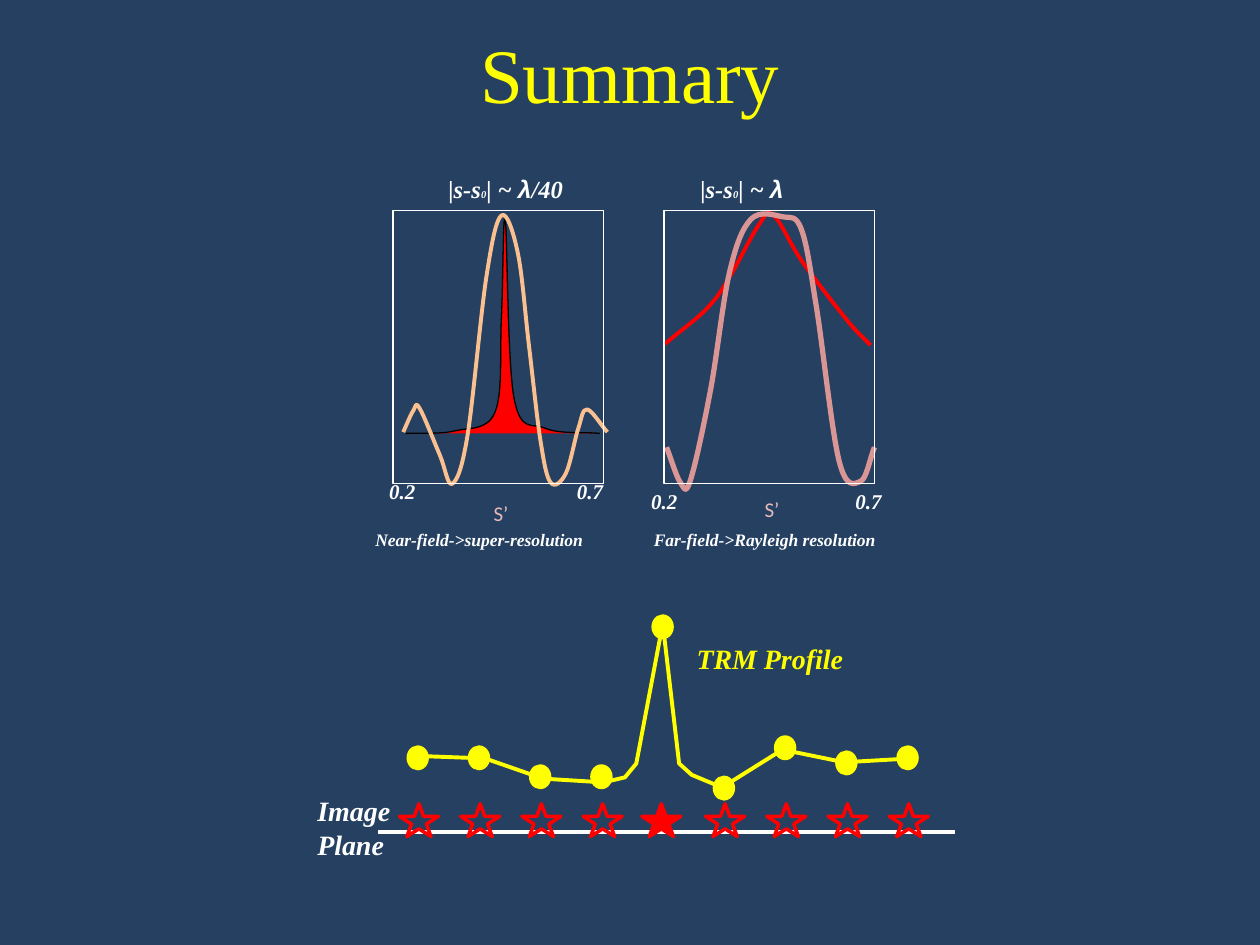
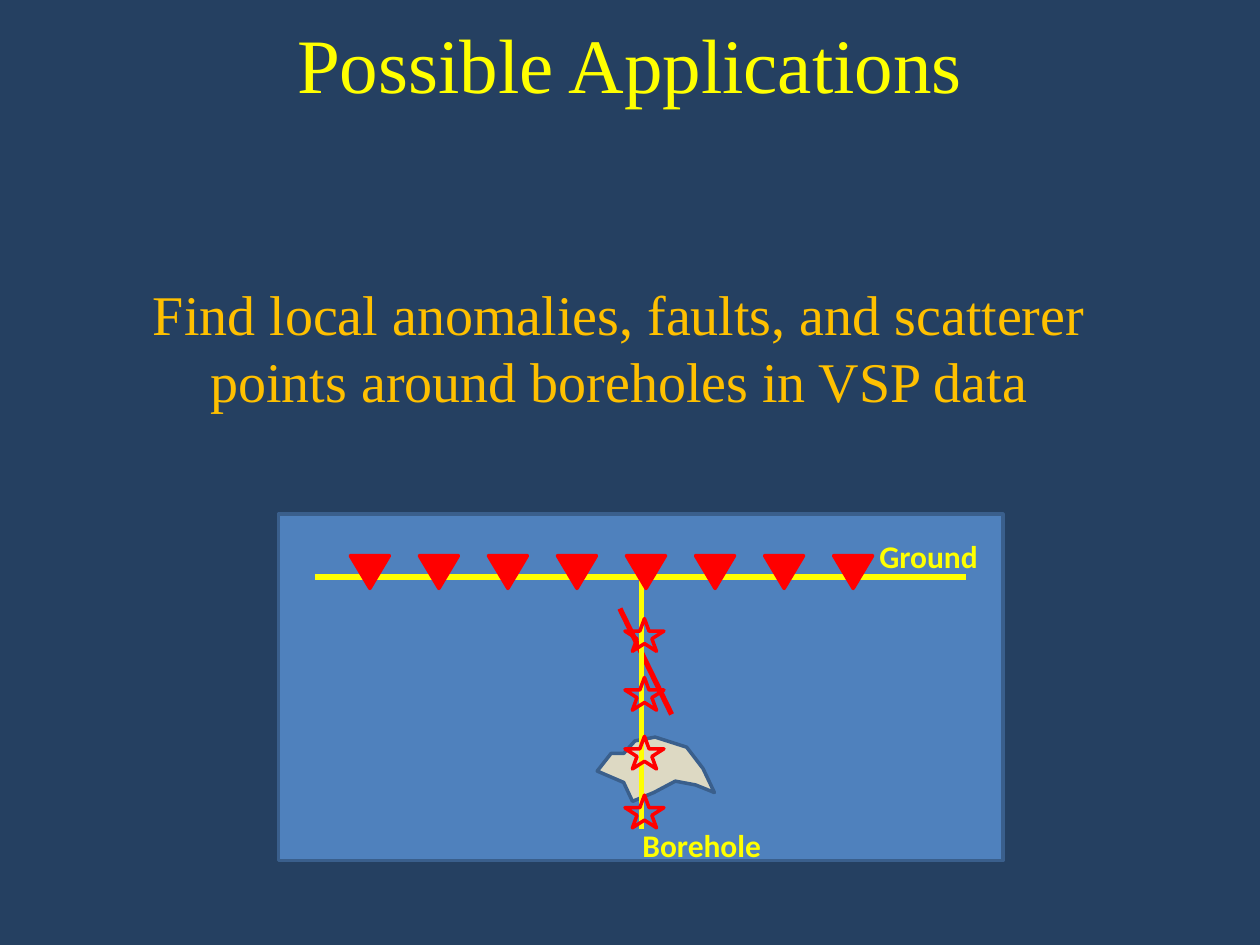
"""Build two slides on imaging resolution, laid out on a grid of 100 by 75 square cells."""

import copy
from dataclasses import dataclass

import pptx
import pptx.dml.color
import pptx.enum.shapes
import pptx.enum.text
import pptx.oxml
import pptx.oxml.ns
import pptx.shapes.autoshape
import pptx.shapes.base
import pptx.slide
import pptx.util

SLIDE_WIDTH = pptx.util.Inches(10)
SLIDE_HEIGHT = pptx.util.Inches(7.5)
COLUMNS = 100
NAVY, WHITE, YELLOW, RED = "254061", "FFFFFF", "FFFF00", "FF0000"
BLUE, DARK_BLUE, SAND, ORANGE = "4F81BD", "3A5F8C", "DDD9C3", "FFC000"
ROSE, PINK, PEACH, BLACK = "D99694", "E6B9B8", "FAC090", "000000"
SERIF, SANS, GREEK = "Times New Roman", "Calibri", "Arial"
MARKER_WIDTH, MARKER_HEIGHT = 3.1, 2.6
PRESET = pptx.enum.shapes.MSO_SHAPE
DRAWING = 'xmlns:a="http://schemas.openxmlformats.org/drawingml/2006/main"'

Point = tuple[float, float]


@dataclass(frozen=True)
class Font:
    """Look of a run."""

    size: float
    color: str = WHITE
    name: str = SERIF
    bold: bool = True
    italic: bool = True


@dataclass(frozen=True)
class Box:
    """Area in grid cells."""

    left: float
    top: float
    width: float
    height: float


@dataclass(frozen=True)
class Curve:
    """Smooth line through knots, given in grid cells."""

    knots: tuple[Point, ...]
    color: str
    weight: float
    fill: str | None = None


@dataclass(frozen=True)
class Panel:
    """Framed resolution plot with its labels."""

    left: float
    heading: Box
    offset: str
    caption: str
    caption_box: Box
    ticks: Box
    tick_gap: float
    axis: Point
    curves: tuple[Curve, ...]


PANELS = (
    Panel(52.7, Box(54.6, 13.3, 9, 3.4), "",
          "Far-field->Rayleigh resolution", Box(50.9, 41.5, 19.9, 2.7),
          Box(50.7, 38.3, 20.5, 3), 16.2, (59.7, 38.9),
          (Curve(((52.8, 27.3), (56.8, 23.7), (60.2, 17.9), (61.4, 17.1), (63.7, 20.8),
                  (67.3, 25.5), (69.1, 27.4)), RED, 2.25),
           Curve(((52.9, 35.5), (54, 38.3), (54.8, 38.1), (56.4, 30.9), (57.9, 21.6),
                  (59.6, 17.4), (62.1, 17.2), (63.6, 18.2), (64.8, 24.4), (66.6, 36.6),
                  (68.3, 38.2), (69.4, 35.5)), ROSE, 3))),
    Panel(31.2, Box(34.6, 13.3, 11.4, 3.4), "/40",
          "Near-field->super-resolution", Box(28.8, 41.5, 18.8, 2.7),
          Box(29.9, 37.5, 19.7, 3), 14.9, (38.2, 39.2),
          (Curve(((32.2, 34.4), (36.1, 34.2), (39.3, 32.7), (39.8, 25.2), (40.1, 17.4),
                  (40.8, 31.6), (43.3, 34), (47.6, 34.4)), BLACK, 0.75, RED),
           Curve(((32, 34.3), (32.8, 32.6), (33.3, 32.4), (34.9, 36.1), (35.9, 38.4),
                  (37.1, 34.6), (38.6, 22), (39.8, 17.1), (41.1, 20.1), (42, 27.6),
                  (42.9, 35), (43.7, 38.3), (44.9, 37.6), (45.9, 34), (46.6, 32.5),
                  (48.2, 34.3)), PEACH, 2.25))),
)
PROFILE_TOPS = (59.3, 59.3, 60.8, 60.8, 48.9, 61.7, 58.5, 59.7, 59.3)
PROFILE = ((33.2, 60), (38.5, 60.2), (43.1, 61.8), (47.9, 62.1), (49.6, 61.7),
           (50.5, 60.6), (52.6, 49.5), (53.9, 60.6), (54.9, 61.5), (57.3, 62.5),
           (62.1, 59.5), (67, 60.5), (72.3, 60.2))
ANOMALY = ((49.5, 59.8), (50.4, 58.8), (52, 58.5), (54.5, 59.3), (55.8, 61),
           (56.7, 62.9), (55.2, 62.3), (53.6, 62), (51.9, 62.9), (50.2, 63.6),
           (49.5, 62.1), (47.4, 61.2), (48.5, 59.8))


def cells(count: float) -> pptx.util.Emu:
    """Turn a number of grid cells into a length."""
    return pptx.util.Emu(round(count * SLIDE_WIDTH / COLUMNS))


def rgb(code: str) -> pptx.dml.color.RGBColor:
    """Turn a hex string into a colour."""
    return pptx.dml.color.RGBColor.from_string(code)


def place(shape: pptx.shapes.base.BaseShape, box: Box) -> None:
    """Move a shape onto its cells."""
    shape.left, shape.top = cells(box.left), cells(box.top)
    shape.width, shape.height = cells(box.width), cells(box.height)


def style(run, font: Font) -> None:
    """Format one run."""
    run.font.size, run.font.name = pptx.util.Pt(font.size), font.name
    run.font.bold, run.font.italic = font.bold, font.italic
    run.font.color.rgb = rgb(font.color)


def paint(shape: pptx.shapes.autoshape.Shape, fill: str | None, line: str, weight: float) -> None:
    """Set fill and outline, without shadow."""
    shape.shadow.inherit = False
    if fill:
        shape.fill.solid()
        shape.fill.fore_color.rgb = rgb(fill)
    else:
        shape.fill.background()
    shape.line.color.rgb = rgb(line)
    shape.line.width = pptx.util.Pt(weight)


def add_label(slide: pptx.slide.Slide, box: Box, text: str, font: Font):
    """Add a text box and return its text frame."""
    label = slide.shapes.add_textbox(0, 0, 0, 0)
    place(label, box)
    label.text_frame.word_wrap = True
    label.text_frame.text = text
    for paragraph in label.text_frame.paragraphs:
        for run in paragraph.runs:
            style(run, font)
    return label.text_frame


def add_preset(slide: pptx.slide.Slide, kind: PRESET, box: Box, fill: str | None,
               line: str, weight: float = 2) -> pptx.shapes.autoshape.Shape:
    """Add a preset shape."""
    preset = slide.shapes.add_shape(kind, 0, 0, 0, 0)
    place(preset, box)
    paint(preset, fill, line, weight)
    return preset


def add_star(slide: pptx.slide.Slide, left: float, top: float, fill: str | None = None) -> None:
    """Add a red star marker."""
    add_preset(slide, PRESET.STAR_5_POINT, Box(left, top, MARKER_WIDTH, MARKER_HEIGHT), fill, RED)


def add_line(slide: pptx.slide.Slide, start: Point, end: Point, color: str, weight: float) -> None:
    """Add a straight line."""
    line = slide.shapes.add_connector(pptx.enum.shapes.MSO_CONNECTOR.STRAIGHT,
                                      *map(cells, start + end))
    line.line.color.rgb = rgb(color)
    line.line.width = pptx.util.Pt(weight)
    line._element.spPr.append(pptx.oxml.parse_xml(f"<a:effectLst {DRAWING}/>"))


def add_outline(slide: pptx.slide.Slide, points: tuple[Point, ...], fill: str | None, line: str,
                weight: float, close: bool = False) -> pptx.shapes.autoshape.Shape:
    """Add a freeform through the points."""
    first, *rest = [(cells(x), cells(y)) for x, y in points]
    builder = slide.shapes.build_freeform(*first)
    builder.add_line_segments(rest, close=close)
    outline = builder.convert_to_shape()
    paint(outline, fill, line, weight)
    return outline


def smooth(outline: pptx.shapes.autoshape.Shape) -> None:
    """Turn the straight segments of a freeform into Catmull-Rom curves."""
    knots = outline._element.xpath(".//a:pathLst//a:pt")
    spots = [(int(knot.get("x")), int(knot.get("y"))) for knot in knots]
    before = tuple(2 * a - b for a, b in zip(spots[0], spots[1]))
    after = tuple(2 * a - b for a, b in zip(spots[-1], spots[-2]))
    padded = [before, *spots, after]
    for index, knot in enumerate(knots[1:]):
        previous, start, end, following = padded[index:index + 4]
        leaving = [s + (e - p) / 6 for p, s, e in zip(previous, start, end)]
        arriving = [e - (f - s) / 6 for s, e, f in zip(start, end, following)]
        for x, y in (leaving, arriving):
            handle = copy.deepcopy(knot)
            handle.set("x", str(round(x)))
            handle.set("y", str(round(y)))
            knot.addprevious(handle)
        knot.getparent().tag = pptx.oxml.ns.qn("a:cubicBezTo")


def add_titled_slide(deck, title: str, top: float) -> pptx.slide.Slide:
    """Add a title-only slide with a formatted title."""
    slide = deck.slides.add_slide(deck.slide_layouts[5])
    heading = slide.shapes.title
    place(heading, Box(0, top, COLUMNS, 10))
    heading.text_frame.text = title
    heading.text_frame.vertical_anchor = pptx.enum.text.MSO_ANCHOR.MIDDLE
    paragraph = heading.text_frame.paragraphs[0]
    paragraph.alignment = pptx.enum.text.PP_ALIGN.CENTER
    style(paragraph.runs[0], Font(44, YELLOW, bold=False, italic=False))
    return slide


def add_panel(slide: pptx.slide.Slide, panel: Panel) -> None:
    """Draw one resolution plot."""
    ticks = add_label(slide, panel.ticks, "0.2\t0.7", Font(12)).paragraphs[0]
    ticks._p.get_or_add_pPr().append(pptx.oxml.parse_xml(
        f'<a:tabLst {DRAWING}><a:tab pos="{cells(panel.tick_gap)}" algn="l"/></a:tabLst>'))
    add_label(slide, Box(*panel.axis, 3.5, 3), "S’", Font(12, PINK, SANS, False, False))
    for curve in panel.curves:
        smooth(add_outline(slide, curve.knots, curve.fill, curve.color, curve.weight))
    add_preset(slide, PRESET.RECTANGLE, Box(panel.left, 16.7, 16.7, 21.7), None, WHITE, 0.75)
    heading = add_label(slide, panel.heading, "|s-s", Font(14)).paragraphs[0]
    for text, font in (("0", Font(6)), ("| ~ ", Font(14)), ("λ", Font(14, name=GREEK)),
                       (panel.offset, Font(14))):
        if text:
            run = heading.add_run()
            run.text = text
            style(run, font)
    add_label(slide, panel.caption_box, panel.caption, Font(10))


def build_summary(deck) -> None:
    """Draw the resolution plots above the profile along the image plane."""
    slide = add_titled_slide(deck, "Summary", 0.8)
    for panel in PANELS:
        add_panel(slide, panel)
    add_line(slide, (30, 66), (75.8, 66), WHITE, 2.25)
    add_label(slide, Box(24.2, 62.5, 8, 6.4), "Image\nPlane", Font(16))
    source = PROFILE_TOPS.index(min(PROFILE_TOPS))
    for index, top in enumerate(PROFILE_TOPS):
        shift = 4.86 * index
        is_source = index == source
        add_star(slide, 31.7 + shift - 0.2 * is_source, 63.8, RED if is_source else None)
        add_preset(slide, PRESET.OVAL, Box(32.4 + shift, top, 1.5, 1.7), YELLOW, YELLOW)
    add_outline(slide, PROFILE, None, YELLOW, 2.25)
    add_label(slide, Box(54.3, 50.4, 14, 3.7), "TRM Profile", Font(16, YELLOW))


def build_applications(deck) -> None:
    """Draw the borehole survey under its purpose."""
    slide = add_titled_slide(deck, "Possible Applications", 0)
    purpose = add_label(
        slide, Box(5.8, 21.7, 86.7, 15),
        "Find local anomalies, faults, and scatterer points around boreholes in VSP data",
        Font(32, ORANGE, bold=False, italic=False)).paragraphs[0]
    purpose.alignment = pptx.enum.text.PP_ALIGN.CENTER
    purpose.space_before = pptx.util.Pt(6.4)
    add_preset(slide, PRESET.RECTANGLE, Box(22.1, 40.8, 57.5, 27.5), BLUE, DARK_BLUE)
    add_line(slide, (25, 45.8), (76.7, 45.8), YELLOW, 3)
    add_line(slide, (49.2, 48.3), (53.3, 56.7), RED, 3)
    add_outline(slide, ANOMALY, SAND, DARK_BLUE, 2, close=True)
    add_line(slide, (50.9, 45.8), (50.9, 65.8), YELLOW, 3)
    for text, box in (("Ground", Box(68.8, 42.1, 10.8, 4)), ("Borehole", Box(50, 65.1, 12.1, 4))):
        add_label(slide, box, text, Font(18, YELLOW, SANS, italic=False))
    for depth in range(4):
        add_star(slide, 49.6, 49.1 + 4.67 * depth)
    for receiver in range(8):
        spot = Box(27.8 + 5.48 * receiver, 44.1, MARKER_WIDTH, MARKER_HEIGHT)
        add_preset(slide, PRESET.ISOSCELES_TRIANGLE, spot, RED, RED).rotation = 180


def main() -> None:
    """Build and save the deck."""
    deck = pptx.Presentation()
    deck.slide_width, deck.slide_height = SLIDE_WIDTH, SLIDE_HEIGHT
    backdrop = deck.slide_master.background.fill
    backdrop.solid()
    backdrop.fore_color.rgb = rgb(NAVY)
    build_summary(deck)
    build_applications(deck)
    deck.save("out.pptx")


if __name__ == "__main__":
    main()
